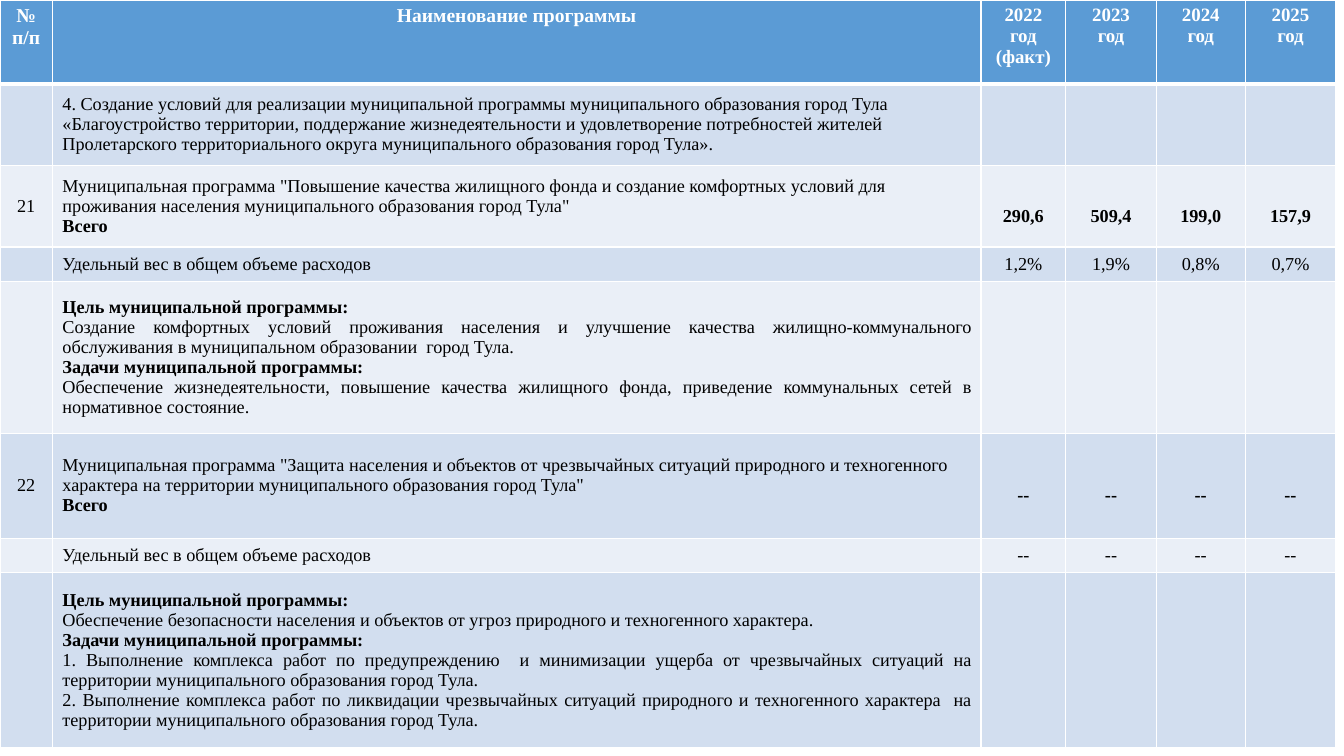
from dataclasses import dataclass

from lxml import etree
from pptx import Presentation
from pptx.dml.color import RGBColor
from pptx.enum.text import MSO_ANCHOR, PP_ALIGN
from pptx.oxml.ns import qn
from pptx.util import Inches, Pt

LEFT, CENTER, JUSTIFY = PP_ALIGN.LEFT, PP_ALIGN.CENTER, PP_ALIGN.JUSTIFY
TOP, MIDDLE = MSO_ANCHOR.TOP, MSO_ANCHOR.MIDDLE


@dataclass(frozen=True)
class Theme:
    font: str = "Times New Roman"
    header_fill: str = "5B9BD5"
    bands: tuple = ("D2DEEF", "EAEFF7")
    border: str = "FFFFFF"
    header_text: str = "FFFFFF"
    body_text: str = "000000"
    header_size: float = 14
    year_size: float = 13.5
    body_size: float = 13


THEME = Theme()
COLUMN_WIDTHS = (0.52, 9.21, 0.84, 0.9, 0.88, 0.9)
ROW_HEIGHTS = (0.83, 0.81, 0.81, 0.34, 1.51, 1.04, 0.34, 1.74)
TOTAL_TOP_MARGIN = 0.25

HEADERS = (
    ("№ п/п",),
    ("Наименование программы",),
    ("2022 год (факт)",),
    ("2023", "год"),
    ("2024", "год"),
    ("2025", "год"),
)
TOTAL = "Всего"
SHARE = "Удельный вес в общем объеме расходов"
GOAL = "Цель муниципальной программы:"
TASKS = "Задачи муниципальной программы:"
BOLD_LINES = (TOTAL, GOAL, TASKS)

PREVIOUS_TASK = (
    "4. Создание условий для реализации муниципальной программы муниципального "
    "образования город Тула «Благоустройство территории, поддержание "
    "жизнедеятельности и удовлетворение потребностей жителей Пролетарского "
    "территориального округа муниципального образования город Тула»."
)


@dataclass(frozen=True)
class Program:
    number: str
    name: str
    totals: tuple
    shares: tuple
    goal: str
    tasks: tuple


PROGRAMS = (
    Program(
        "21",
        'Муниципальная программа "Повышение качества жилищного фонда и создание '
        "комфортных условий для проживания населения муниципального образования "
        'город Тула"',
        ("290,6", "509,4", "199,0", "157,9"),
        ("1,2%", "1,9%", "0,8%", "0,7%"),
        "Создание комфортных условий проживания населения и улучшение качества "
        "жилищно-коммунального обслуживания в муниципальном образовании  город Тула.",
        (
            "Обеспечение жизнедеятельности, повышение качества жилищного фонда, "
            "приведение коммунальных сетей в нормативное состояние.",
        ),
    ),
    Program(
        "22",
        'Муниципальная программа "Защита населения и объектов от чрезвычайных '
        "ситуаций природного и техногенного характера на территории "
        'муниципального образования город Тула"',
        ("--",) * 4,
        ("--",) * 4,
        "Обеспечение безопасности населения и объектов от угроз природного и "
        "техногенного характера.",
        (
            "1. Выполнение комплекса работ по предупреждению  и минимизации ущерба "
            "от чрезвычайных ситуаций на территории муниципального образования "
            "город Тула.",
            "2. Выполнение комплекса работ по ликвидации чрезвычайных ситуаций "
            "природного и техногенного характера  на территории муниципального "
            "образования город Тула.",
        ),
    ),
)


def style_cell(cell, fill, bottom_width=1):
    properties = cell._tc.get_or_add_tcPr()
    for side, width in (("L", 1), ("R", 1), ("T", 1), ("B", bottom_width)):
        line = etree.SubElement(properties, qn(f"a:ln{side}"), w=str(Pt(width)))
        solid = etree.SubElement(line, qn("a:solidFill"))
        etree.SubElement(solid, qn("a:srgbClr"), val=THEME.border)
    cell.fill.solid()
    cell.fill.fore_color.rgb = RGBColor.from_string(fill)


def write_cell(cell, lines, size, color, align, anchor=MIDDLE, bold=False):
    cell.vertical_anchor = anchor
    cell.text = "\n".join(lines)
    for paragraph in cell.text_frame.paragraphs:
        paragraph.alignment = align
        font = paragraph.font
        font.name = THEME.font
        font.size = Pt(size)
        font.bold = bold or paragraph.text in BOLD_LINES
        font.color.rgb = RGBColor.from_string(color)


def fill_header(table):
    for column, lines in enumerate(HEADERS):
        cell = table.cell(0, column)
        style_cell(cell, THEME.header_fill, bottom_width=3)
        size = THEME.header_size if column < 2 else THEME.year_size
        write_cell(cell, lines, size, THEME.header_text, CENTER, TOP, bold=True)


def fill_row(table, row, description, align, number="", values=("",) * 4, total=False):
    contents = ((number,), description, *((value,) for value in values))
    for column, lines in enumerate(contents):
        cell = table.cell(row, column)
        style_cell(cell, THEME.bands[(row - 1) % 2])
        if not any(lines):
            cell.margin_top = cell.margin_bottom = 0
            continue
        is_total = total and column > 1
        write_cell(cell, lines, THEME.body_size, THEME.body_text,
                   align if column == 1 else CENTER, bold=is_total)
        if is_total:
            cell.margin_top = Inches(TOTAL_TOP_MARGIN)


def fill_program(table, row, program):
    fill_row(table, row, (program.name, TOTAL), LEFT,
             program.number, program.totals, total=True)
    fill_row(table, row + 1, (SHARE,), JUSTIFY, values=program.shares)
    fill_row(table, row + 2, (GOAL, program.goal, TASKS, *program.tasks), JUSTIFY)


def add_program_table(slide):
    table = slide.shapes.add_table(
        len(ROW_HEIGHTS), len(COLUMN_WIDTHS), 0, 0,
        Inches(sum(COLUMN_WIDTHS)), Inches(sum(ROW_HEIGHTS)),
    ).table
    table.horz_banding = False
    for column, width in zip(table.columns, COLUMN_WIDTHS):
        column.width = Inches(width)
    for row, height in zip(table.rows, ROW_HEIGHTS):
        row.height = Inches(height)
    fill_header(table)
    fill_row(table, 1, (PREVIOUS_TASK,), LEFT)
    for index, program in enumerate(PROGRAMS):
        fill_program(table, 2 + 3 * index, program)


def main():
    presentation = Presentation()
    presentation.slide_width = Inches(13.33)
    presentation.slide_height = Inches(7.5)
    slide = presentation.slides.add_slide(presentation.slide_layouts[6])
    add_program_table(slide)
    presentation.save("out.pptx")


if __name__ == "__main__":
    main()
